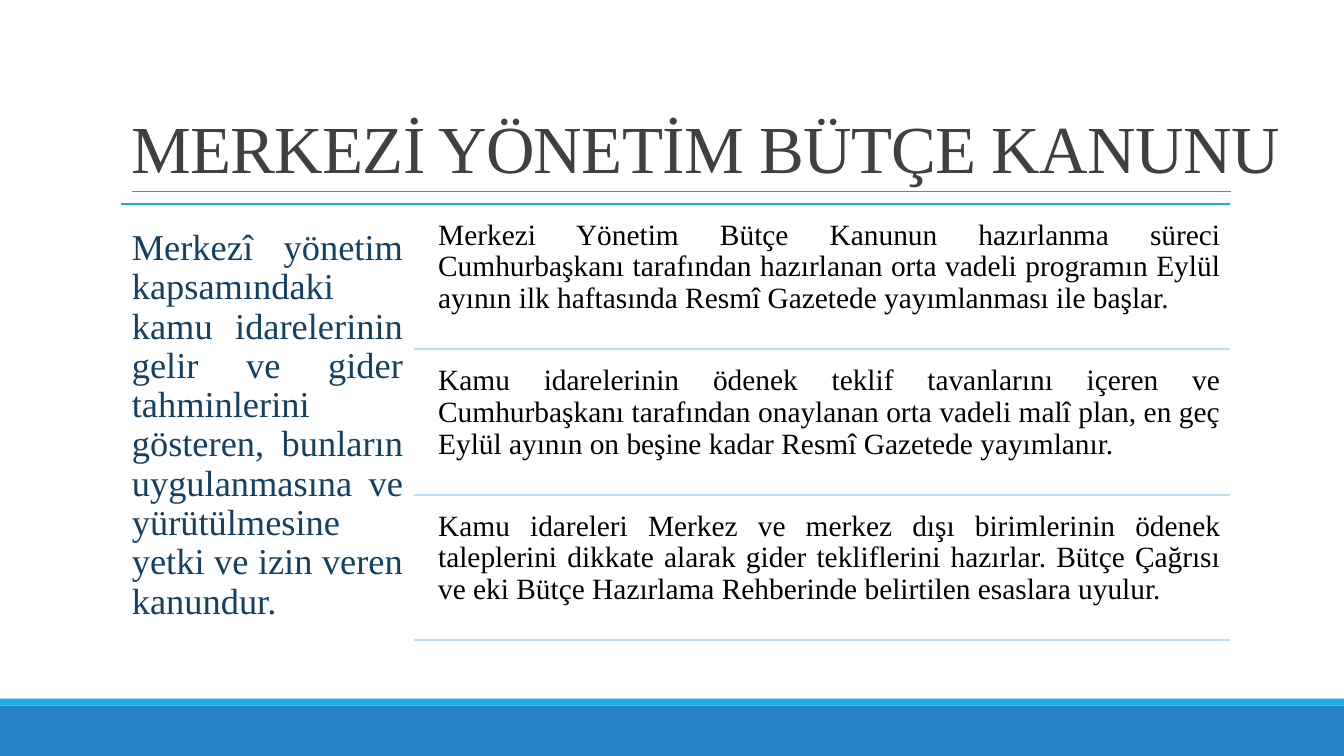
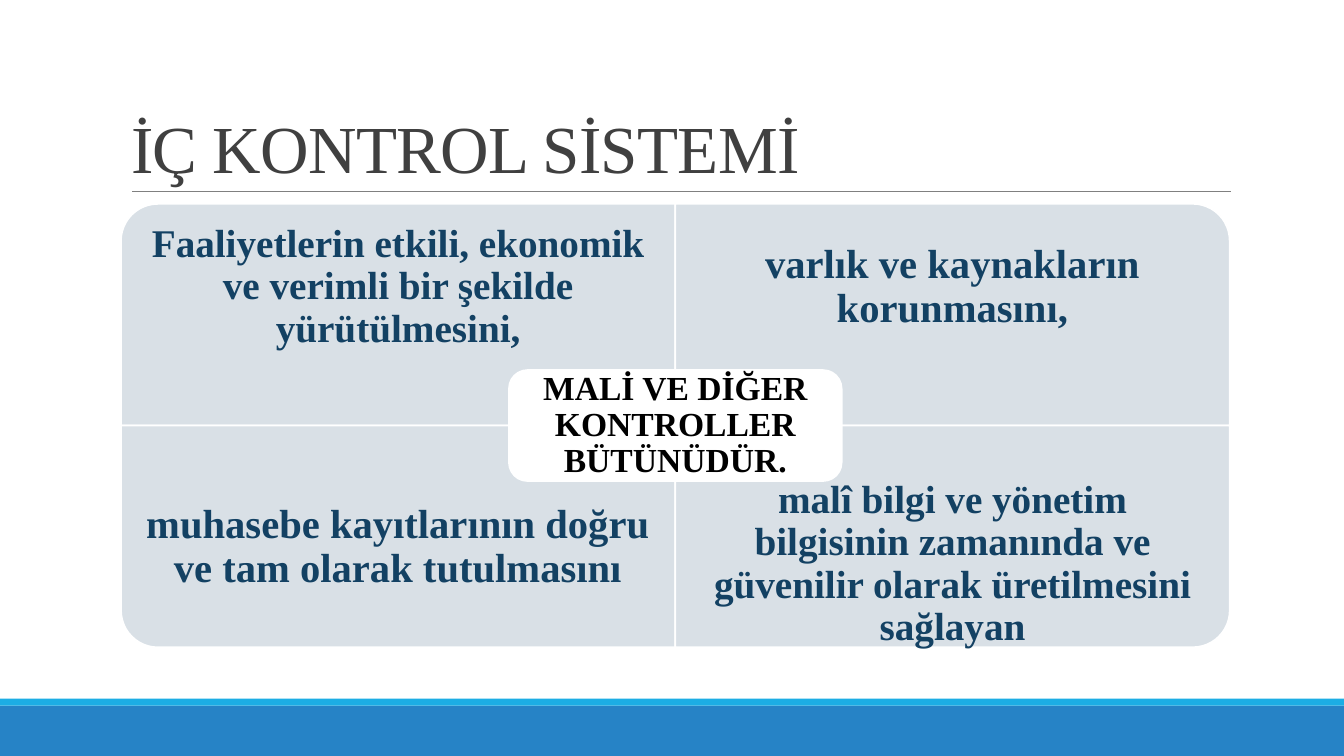
from lxml import etree
from pptx import Presentation
from pptx.dml.color import RGBColor
from pptx.enum.shapes import MSO_CONNECTOR, MSO_SHAPE
from pptx.enum.text import MSO_ANCHOR, MSO_AUTO_SIZE, PP_ALIGN
from pptx.oxml.ns import qn
from pptx.util import Pt

STRAIGHT = MSO_CONNECTOR.STRAIGHT
RECT = MSO_SHAPE.RECTANGLE
ROUND_RECT = MSO_SHAPE.ROUNDED_RECTANGLE
ONE_ROUND_CORNER = MSO_SHAPE.ROUND_1_RECTANGLE
TOP, MIDDLE, BOTTOM = MSO_ANCHOR.TOP, MSO_ANCHOR.MIDDLE, MSO_ANCHOR.BOTTOM
LEFT, CENTER, JUSTIFY = PP_ALIGN.LEFT, PP_ALIGN.CENTER, PP_ALIGN.JUSTIFY
NO_AUTOFIT = MSO_AUTO_SIZE.NONE

FONT = "Times New Roman"
COLORS = {
    "band": "2683C6",
    "accent": "1CADE4",
    "title": "404040",
    "title_rule": "808080",
    "step_rule": "BDDBF2",
    "navy": "134163",
    "panel": "D9E0E6",
    "black": "000000",
    "white": "FFFFFF",
}

# Lengths in points
SLIDE_W, SLIDE_H = 960, 540
CONTENT_X, CONTENT_Y = 86.4, 145.6
CONTENT_W, CONTENT_H = 792, 316.8
RULE_WEIGHT = 1.25

DEFINITION = (
    "Merkezî yönetim kapsamındaki kamu idarelerinin gelir ve gider tahminlerini "
    "gösteren, bunların uygulanmasına ve yürütülmesine yetki ve izin veren kanundur."
)
BUDGET_STEPS = [
    "Merkezi Yönetim Bütçe Kanunun hazırlanma süreci Cumhurbaşkanı tarafından "
    "hazırlanan orta vadeli programın Eylül ayının ilk haftasında Resmî Gazetede "
    "yayımlanması ile başlar.",
    "Kamu idarelerinin ödenek teklif tavanlarını içeren ve Cumhurbaşkanı tarafından "
    "onaylanan orta vadeli malî plan, en geç Eylül ayının on beşine kadar Resmî "
    "Gazetede yayımlanır.",
    "Kamu idareleri Merkez ve merkez dışı birimlerinin ödenek taleplerini dikkate "
    "alarak gider tekliflerini hazırlar. Bütçe Çağrısı ve eki Bütçe Hazırlama "
    "Rehberinde belirtilen esaslara uyulur.",
]
# Column, row, rotation, font size, text anchor, text
CONTROL_GOALS = [
    (0, 0, 270, 28, MIDDLE,
     "Faaliyetlerin etkili, ekonomik ve verimli bir şekilde yürütülmesini,"),
    (1, 0, 0, 29, MIDDLE, "varlık ve kaynakların korunmasını,"),
    (0, 1, 180, 29, TOP, "muhasebe kayıtlarının doğru ve tam olarak tutulmasını"),
    (1, 1, 90, 28, MIDDLE,
     "malî bilgi ve yönetim bilgisinin zamanında ve güvenilir olarak "
     "üretilmesini sağlayan"),
]


def color(name):
    return RGBColor.from_string(COLORS[name])


def box(x, y, w, h):
    return Pt(x), Pt(y), Pt(w), Pt(h)


def add_rule(slide, x1, x2, y, color_name, weight=RULE_WEIGHT):
    rule = slide.shapes.add_connector(STRAIGHT, Pt(x1), Pt(y), Pt(x2), Pt(y))
    rule.line.color.rgb = color(color_name)
    rule.line.width = Pt(weight)
    etree.SubElement(rule.element.spPr, qn("a:effectLst"))
    return rule


def add_block(slide, kind, bounds, fill, outline=None):
    block = slide.shapes.add_shape(kind, *box(*bounds))
    block.shadow.inherit = False
    block.fill.solid()
    block.fill.fore_color.rgb = color(fill)
    if outline:
        block.line.color.rgb = color(outline)
        block.line.width = Pt(RULE_WEIGHT)
    else:
        block.line.fill.background()
    return block


def write(frame, text, size, color_name, align, anchor=TOP, inset=None,
          bold=False, spacing=0.9):
    """Fill a text frame with one formatted paragraph and return its run."""
    frame.word_wrap = True
    frame.auto_size = NO_AUTOFIT
    frame.vertical_anchor = anchor
    if inset is not None:
        frame.margin_left = frame.margin_right = Pt(inset)
        frame.margin_top = frame.margin_bottom = Pt(inset)
    paragraph = frame.paragraphs[0]
    paragraph.alignment = align
    paragraph.line_spacing = spacing
    run = paragraph.add_run()
    run.text = text
    run.font.name = FONT
    run.font.size = Pt(size)
    run.font.bold = bold
    run.font.color.rgb = color(color_name)
    return run


def add_text(slide, bounds, text, size, color_name, align, **style):
    frame = slide.shapes.add_textbox(*box(*bounds)).text_frame
    write(frame, text, size, color_name, align, **style)


def set_title(slide, text, width=CONTENT_W):
    title = slide.shapes.title
    title.left, title.top, title.width, title.height = box(
        CONTENT_X, 22.6, width, 114.4)
    run = write(title.text_frame, text, 48, "title", LEFT, anchor=BOTTOM, spacing=0.85)
    run.font._element.set("spc", "-50")


def move_frame_to_layout(slide):
    """Draw the bands and title rule, then hand them to the slide's layout."""
    parts = [
        add_block(slide, RECT, (0, 504, SLIDE_W, 36), "band"),
        add_block(slide, RECT, (0, 499, SLIDE_W, 5), "accent"),
        add_rule(slide, 94.5, 879, 137, "title_rule", 0.5),
    ]
    layout_tree = slide.slide_layout.shapes.element
    for shape_id, part in enumerate(parts, start=101):
        part.element.xpath(".//p:cNvPr")[0].set("id", str(shape_id))
        layout_tree.append(part.element)


def build_budget_law(slide):
    set_title(slide, "MERKEZİ YÖNETİM BÜTÇE KANUNU", width=841)
    right = CONTENT_X + CONTENT_W
    add_rule(slide, CONTENT_X, right, CONTENT_Y, "accent")
    add_text(slide, (CONTENT_X, CONTENT_Y, 209.5, CONTENT_H), DEFINITION, 26,
             "navy", JUSTIFY, anchor=MIDDLE, inset=7.8)

    text_x, text_h, gap = 306.7, 98.8, 5.1
    for index, step in enumerate(BUDGET_STEPS):
        y = CONTENT_Y + gap + index * (text_h + gap)
        add_text(slide, (text_x, y, right - text_x, text_h), step, 21,
                 "black", JUSTIFY, inset=6.3)
        add_rule(slide, 296, right, y + text_h, "step_rule")


def add_goal(slide, column, row, rotation, size, anchor, text):
    """Add one quarter panel, rounded at its outer corner, with its text."""
    w, h = CONTENT_W / 2, CONTENT_H / 2
    x, y = CONTENT_X + column * w, CONTENT_Y + row * h
    panel_w, panel_h = (h, w) if rotation % 180 else (w, h)
    bounds = (x + (w - panel_w) / 2, y + (h - panel_h) / 2, panel_w, panel_h)
    panel = add_block(slide, ONE_ROUND_CORNER, bounds, "panel", "white")
    panel.rotation = rotation

    text_h = h * 0.75
    text_y = y + row * (h - text_h)
    add_text(slide, (x, text_y, w, text_h), text, size, "navy", CENTER,
             anchor=anchor, inset=16, bold=True)


def build_internal_control(slide):
    set_title(slide, "İÇ KONTROL SİSTEMİ")
    for goal in CONTROL_GOALS:
        add_goal(slide, *goal)
    w, h = CONTENT_W * 0.3, CONTENT_H / 4
    bounds = (CONTENT_X + (CONTENT_W - w) / 2, CONTENT_Y + (CONTENT_H - h) / 2, w, h)
    summary = add_block(slide, ROUND_RECT, bounds, "white", "white")
    write(summary.text_frame, "MALİ VE DİĞER KONTROLLER BÜTÜNÜDÜR.", 24, "black",
          CENTER, anchor=MIDDLE, inset=7.2, bold=True)


def main():
    deck = Presentation()
    deck.slide_width, deck.slide_height = Pt(SLIDE_W), Pt(SLIDE_H)
    title_only = deck.slide_layouts[5]
    budget_law = deck.slides.add_slide(title_only)
    move_frame_to_layout(budget_law)
    build_budget_law(budget_law)
    build_internal_control(deck.slides.add_slide(title_only))
    deck.save("out.pptx")


if __name__ == "__main__":
    main()
